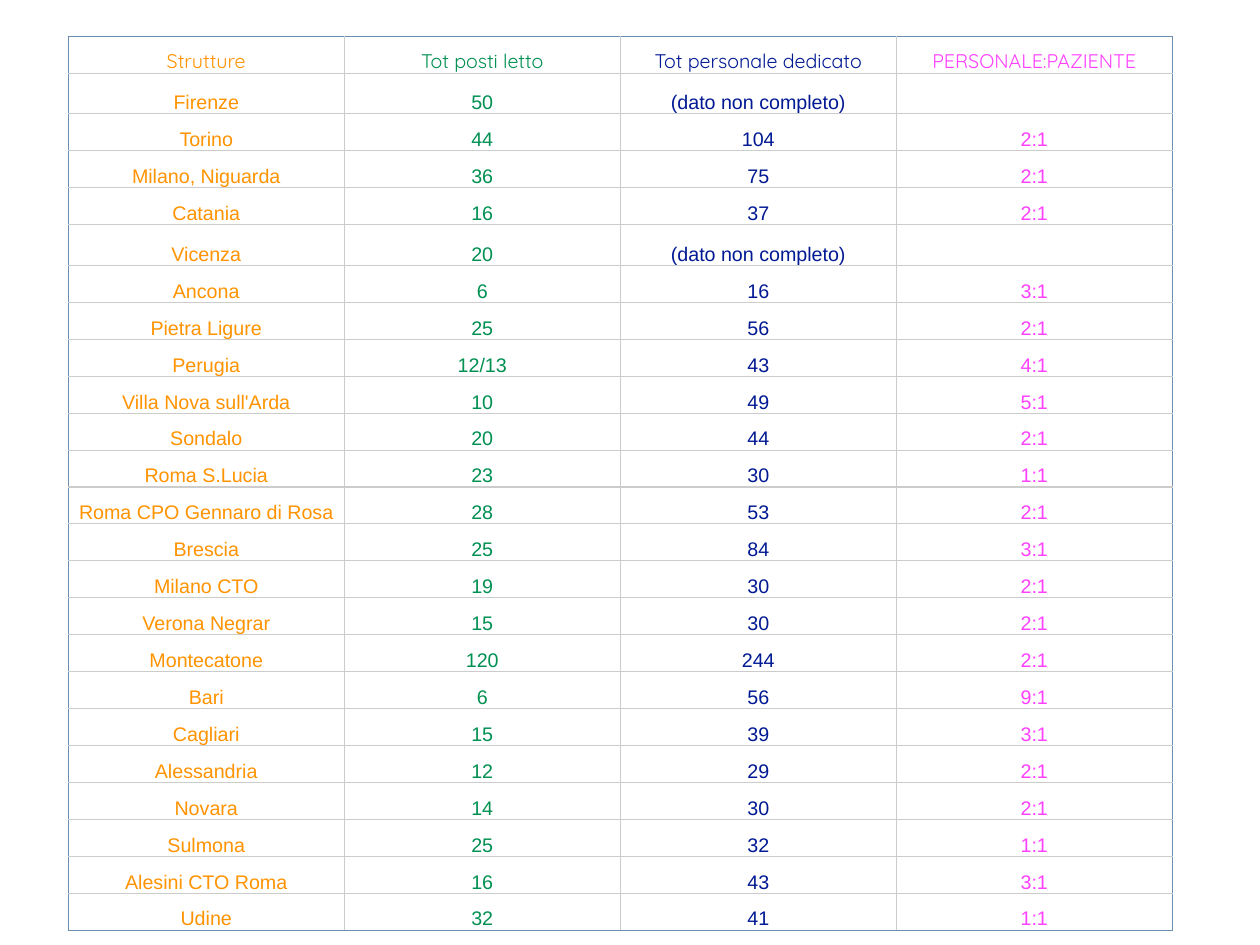
from dataclasses import dataclass
from lxml.etree import SubElement
from pptx import Presentation
from pptx.dml.color import RGBColor
from pptx.enum.text import MSO_ANCHOR, PP_ALIGN
from pptx.oxml.ns import qn
from pptx.util import Inches, Pt


@dataclass(frozen=True)
class Theme:
    inks: tuple = ("FF9300", "009051", "011993", "FF40FF")
    paper: str = "FFFFFF"
    grid: str = "CCCCCC"
    frame: str = "6C8EB0"
    head: str = "Quicksand"
    body: str = "Arial"
    size: int = 16
    line: int = 30
    rule: int = 1


PARTIAL = "(dato non completo)"
HEADS = ("Strutture", "Tot posti letto", "Tot personale dedicato", "PERSONALE:PAZIENTE")
CENTRES = [
    ("Firenze", "50", PARTIAL, ""),
    ("Torino", "44", "104", "2:1"),
    ("Milano, Niguarda", "36", "75", "2:1"),
    ("Catania", "16", "37", "2:1"),
    ("Vicenza", "20", PARTIAL, ""),
    ("Ancona", "6", "16", "3:1"),
    ("Pietra Ligure", "25", "56", "2:1"),
    ("Perugia", "12/13", "43", "4:1"),
    ("Villa Nova sull'Arda", "10", "49", "5:1"),
    ("Sondalo", "20", "44", "2:1"),
    ("Roma S.Lucia", "23", "30", "1:1"),
    ("Roma CPO Gennaro di Rosa", "28", "53", "2:1"),
    ("Brescia", "25", "84", "3:1"),
    ("Milano CTO", "19", "30", "2:1"),
    ("Verona Negrar", "15", "30", "2:1"),
    ("Montecatone", "120", "244", "2:1"),
    ("Bari", "6", "56", "9:1"),
    ("Cagliari", "15", "39", "3:1"),
    ("Alessandria", "12", "29", "2:1"),
    ("Novara", "14", "30", "2:1"),
    ("Sulmona", "25", "32", "1:1"),
    ("Alesini CTO Roma", "16", "43", "3:1"),
    ("Udine", "32", "41", "1:1"),
]


class Page:
    def __init__(self, slide, theme):
        self.slide, self.theme = slide, theme

    def table(self, rows, left, top, width, height, tall):
        """Draw rows under a header row; a row with an empty cell is tall."""
        last, end = len(rows) - 1, len(rows[0]) - 1
        grid = self.slide.shapes.add_table(
            len(rows), len(rows[0]), Inches(left), Inches(top),
            Inches(width), Inches(height * len(rows))).table
        grid.first_row = grid.horz_banding = False
        for r, row in enumerate(rows):
            grid.rows[r].height = Inches(height if all(row) else tall)
            for c, text in enumerate(row):
                cell = grid.cell(r, c)
                outer = {"L": c == 0, "R": c == end, "T": r == 0, "B": r == last}
                self.edges(cell, outer)
                font = self.theme.body if r else self.theme.head
                self.fill(cell, text, font, self.theme.inks[c])

    def edges(self, cell, outer):
        """Rule the four sides, with the frame colour on outer ones."""
        props = cell._tc.get_or_add_tcPr()
        for side, framed in outer.items():
            line = SubElement(props, qn(f"a:ln{side}"), w=str(Pt(self.theme.rule)))
            paint = SubElement(line, qn("a:solidFill"))
            tone = self.theme.frame if framed else self.theme.grid
            SubElement(paint, qn("a:srgbClr"), val=tone)

    def fill(self, cell, text, font, ink):
        cell.fill.solid()
        cell.fill.fore_color.rgb = RGBColor.from_string(self.theme.paper)
        cell.margin_left = cell.margin_right = Inches(0)
        cell.margin_top = cell.margin_bottom = Inches(0)
        cell.vertical_anchor = MSO_ANCHOR.BOTTOM
        cell.text = text
        para = cell.text_frame.paragraphs[0]
        para.alignment = PP_ALIGN.CENTER
        para.line_spacing = Pt(self.theme.line)
        para.font.name = font
        para.font.size = Pt(self.theme.size)
        para.font.color.rgb = RGBColor.from_string(ink)


def main():
    deck = Presentation()
    deck.slide_width, deck.slide_height = Inches(14.22), Inches(10.67)
    page = Page(deck.slides.add_slide(deck.slide_layouts[6]), Theme())
    page.table([HEADS, *CENTRES], left=0.77, top=0.41, width=12.46,
               height=0.39, tall=0.46)
    deck.save("out.pptx")


if __name__ == "__main__":
    main()
